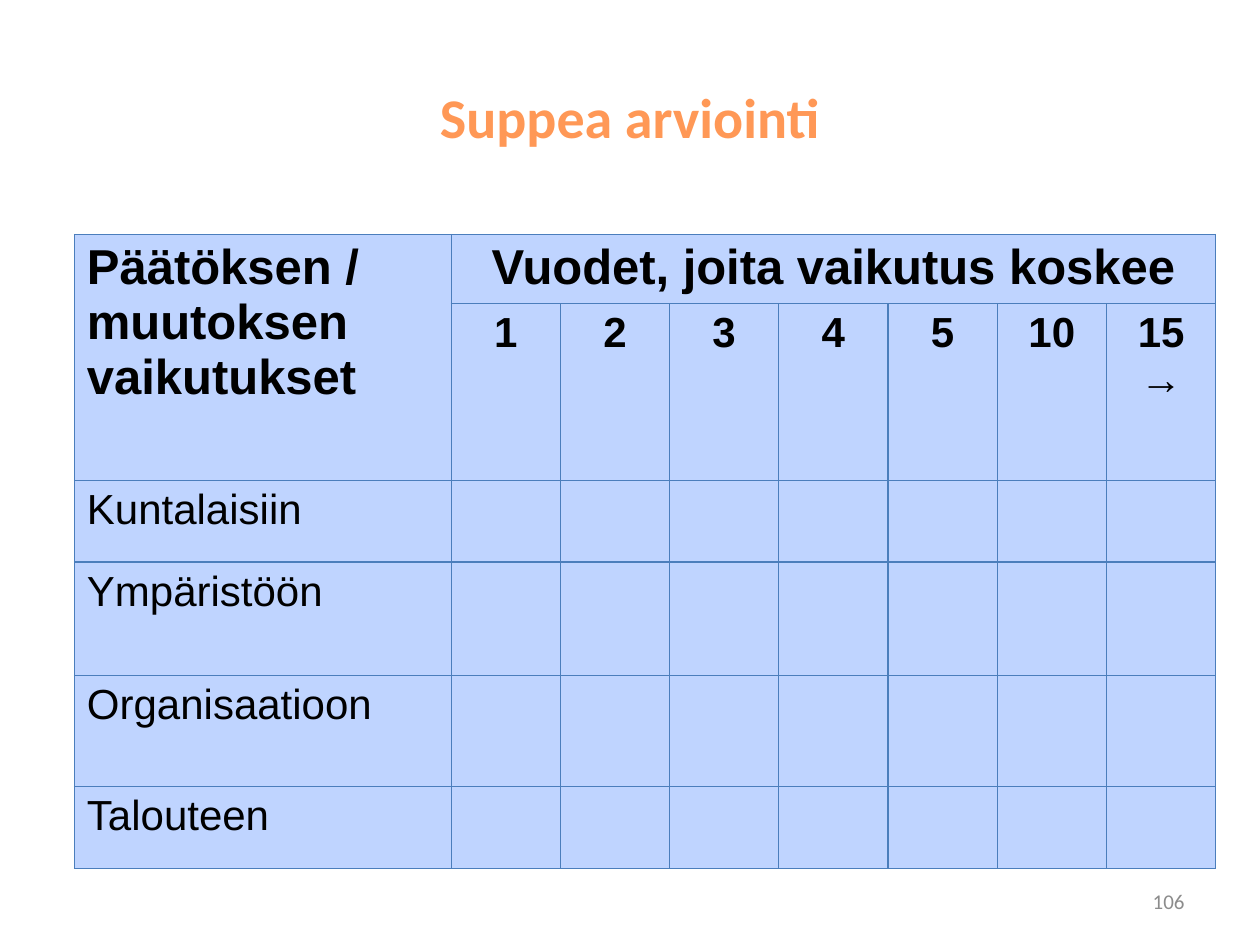
"""Build the brief impact assessment slide with its table of affected years."""
from dataclasses import dataclass

import pptx
import pptx.dml.color
import pptx.enum.text
import pptx.oxml
import pptx.oxml.ns
import pptx.util
from pptx.util import Inches

RGBColor = pptx.dml.color.RGBColor
Alignment = pptx.enum.text.PP_ALIGN
Anchor = pptx.enum.text.MSO_ANCHOR

ORANGE = RGBColor(0xFF, 0x98, 0x56)
GRAY = RGBColor(0x8C, 0x8C, 0x8C)
BLACK = RGBColor(0x00, 0x00, 0x00)
CELL_BLUE = RGBColor(0xBF, 0xD4, 0xFF)
BORDER_BLUE = RGBColor(0x4B, 0x7E, 0xBC)

YEARS = ["1", "2", "3", "4", "5", "10", "15 →"]
TARGETS = ["Kuntalaisiin", "Ympäristöön", "Organisaatioon", "Talouteen"]
COLUMN_WIDTHS = [2.99] + [0.867] * len(YEARS)
ROW_HEIGHTS = [0.55, 1.4, 0.65, 0.9, 0.88, 0.65]


@dataclass(frozen=True)
class TextStyle:
    font: str
    size: int
    color: RGBColor
    bold: bool = False
    alignment: Alignment = Alignment.LEFT


TITLE = TextStyle("Calibri", 32, ORANGE, True, Alignment.CENTER)
PAGE_NUMBER = TextStyle("Calibri", 12, GRAY, alignment=Alignment.RIGHT)
HEADING = TextStyle("Arial", 28, BLACK, True)
SPAN_HEADING = TextStyle("Arial", 28, BLACK, True, Alignment.CENTER)
YEAR = TextStyle("Arial", 24, BLACK, True, Alignment.CENTER)
TARGET = TextStyle("Arial", 24, BLACK)


@dataclass(frozen=True)
class Entry:
    row: int
    column: int
    text: str
    style: TextStyle


def write_text(text_frame, text: str, style: TextStyle) -> None:
    paragraph = text_frame.paragraphs[0]
    paragraph.alignment = style.alignment
    run = paragraph.add_run()
    run.text = text
    run.font.name = style.font
    run.font.size = pptx.util.Pt(style.size)
    run.font.bold = style.bold
    run.font.color.rgb = style.color


def format_cell(cell) -> None:
    cell.fill.solid()
    cell.fill.fore_color.rgb = CELL_BLUE
    properties = cell._tc.get_or_add_tcPr()
    for index, side in enumerate(("lnL", "lnR", "lnT", "lnB")):
        border = pptx.oxml.parse_xml(
            f'<a:{side} {pptx.oxml.ns.nsdecls("a")} w="{pptx.util.Pt(0.75)}">'
            f'<a:solidFill><a:srgbClr val="{BORDER_BLUE}"/></a:solidFill></a:{side}>'
        )
        properties.insert(index, border)


def add_impact_table(slide) -> None:
    frame = slide.shapes.add_table(
        len(ROW_HEIGHTS), len(COLUMN_WIDTHS), Inches(0.59), Inches(1.86),
        Inches(sum(COLUMN_WIDTHS)), Inches(sum(ROW_HEIGHTS)),
    )
    table = frame.table
    table.first_row = False
    table.horz_banding = False
    for column, width in zip(table.columns, COLUMN_WIDTHS):
        column.width = Inches(width)
    for row, height in zip(table.rows, ROW_HEIGHTS):
        row.height = Inches(height)
    for cell in table.iter_cells():
        format_cell(cell)
    table.cell(0, 0).merge(table.cell(1, 0))
    table.cell(0, 1).merge(table.cell(0, len(YEARS)))

    entries = [
        Entry(0, 0, "Päätöksen / muutoksen vaikutukset", HEADING),
        Entry(0, 1, "Vuodet, joita vaikutus koskee", SPAN_HEADING),
    ]
    entries += [Entry(1, column, year, YEAR) for column, year in enumerate(YEARS, 1)]
    entries += [Entry(row, 0, target, TARGET) for row, target in enumerate(TARGETS, 2)]
    for entry in entries:
        cell = table.cell(entry.row, entry.column)
        write_text(cell.text_frame, entry.text, entry.style)


def add_title(slide) -> None:
    title = slide.shapes.title
    title.left, title.top = Inches(0.5), Inches(0.3)
    title.width, title.height = Inches(9), Inches(1.25)
    title.text_frame.vertical_anchor = Anchor.MIDDLE
    write_text(title.text_frame, "Suppea arviointi", TITLE)


def add_page_number(slide) -> None:
    box = slide.shapes.add_textbox(Inches(7.17), Inches(6.95), Inches(2.33), Inches(0.4))
    box.text_frame.word_wrap = True
    box.text_frame.vertical_anchor = Anchor.MIDDLE
    write_text(box.text_frame, "106", PAGE_NUMBER)


def main() -> None:
    presentation = pptx.Presentation()
    presentation.slide_width = Inches(10)
    presentation.slide_height = Inches(7.5)
    slide = presentation.slides.add_slide(presentation.slide_layouts[5])
    add_title(slide)
    add_impact_table(slide)
    add_page_number(slide)
    presentation.save("out.pptx")


if __name__ == "__main__":
    main()
